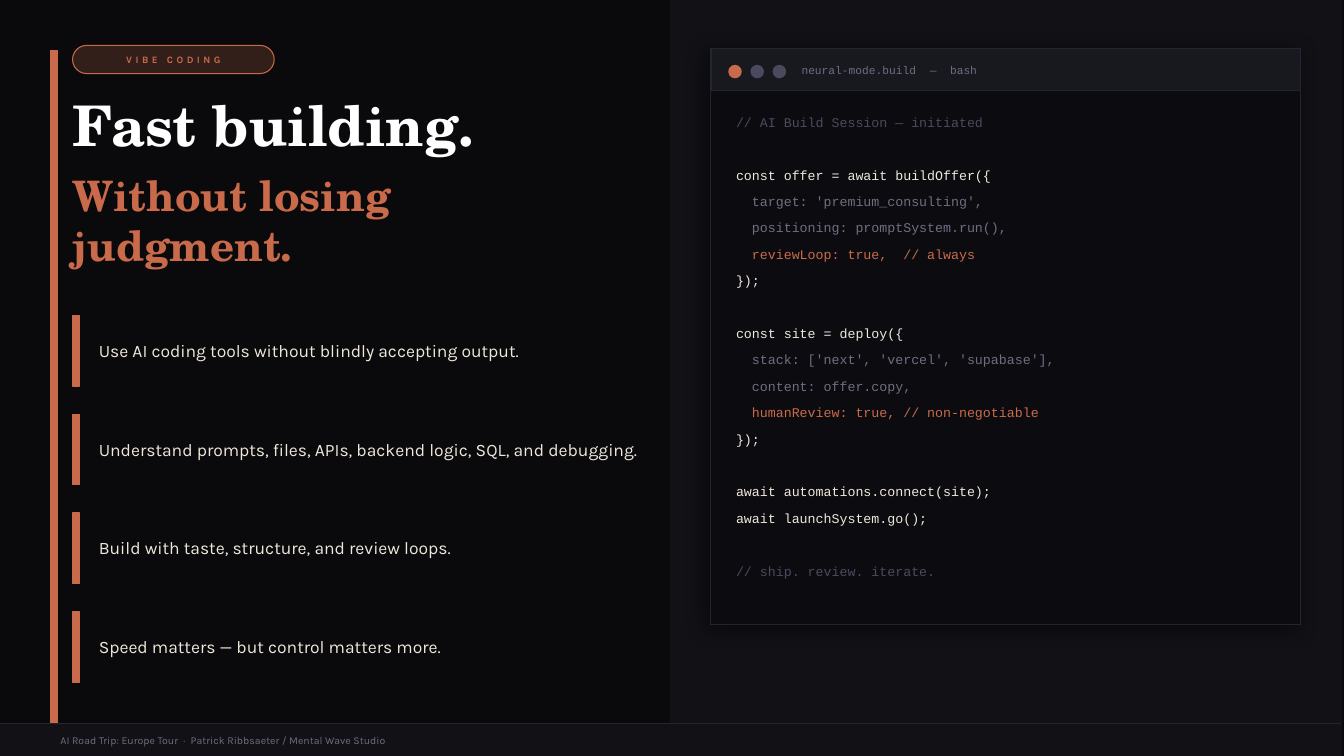
from lxml import etree
from pptx import Presentation
from pptx.dml.color import RGBColor
from pptx.enum.shapes import MSO_CONNECTOR, MSO_SHAPE
from pptx.enum.text import MSO_ANCHOR, PP_ALIGN
from pptx.oxml.ns import qn
from pptx.util import Inches, Pt

RECT, OVAL, PILL = MSO_SHAPE.RECTANGLE, MSO_SHAPE.OVAL, MSO_SHAPE.ROUNDED_RECTANGLE
STRAIGHT = MSO_CONNECTOR.STRAIGHT
TOP, MIDDLE = MSO_ANCHOR.TOP, MSO_ANCHOR.MIDDLE
LEFT, CENTER = PP_ALIGN.LEFT, PP_ALIGN.CENTER

NIGHT = RGBColor(0x0A, 0x0A, 0x0C)
PANEL = RGBColor(0x11, 0x11, 0x16)
SCREEN = RGBColor(0x0C, 0x0C, 0x10)
TITLE = RGBColor(0x18, 0x18, 0x1F)
EDGE = RGBColor(0x25, 0x25, 0x32)
RUST = RGBColor(0xC9, 0x6A, 0x4A)
SLATE = RGBColor(0x4A, 0x4A, 0x5E)
GREY = RGBColor(0x6E, 0x6E, 0x82)
CREAM = RGBColor(0xEF, 0xE8, 0xDC)
WHITE = RGBColor(0xFF, 0xFF, 0xFF)

SANS, SERIF, MONO = "Karla", "TeX Gyre Schola", "Courier New"

CODE = [
    ("// AI Build Session — initiated", SLATE),
    None,
    ("const offer = await buildOffer({", CREAM),
    ("  target: 'premium_consulting',", GREY),
    ("  positioning: promptSystem.run(),", GREY),
    ("  reviewLoop: true,  // always", RUST),
    ("});", CREAM),
    None,
    ("const site = deploy({", CREAM),
    ("  stack: ['next', 'vercel', 'supabase'],", GREY),
    ("  content: offer.copy,", GREY),
    ("  humanReview: true, // non-negotiable", RUST),
    ("});", CREAM),
    None,
    ("await automations.connect(site);", CREAM),
    ("await launchSystem.go();", CREAM),
    None,
    ("// ship. review. iterate.", SLATE),
]

POINTS = [
    "Use AI coding tools without blindly accepting output.",
    "Understand prompts, files, APIs, backend logic, SQL, and debugging.",
    "Build with taste, structure, and review loops.",
    "Speed matters — but control matters more.",
]


class Deck:
    def __init__(self):
        self.prs = Presentation()
        self.prs.slide_width = Inches(13.33)
        self.prs.slide_height = Inches(7.5)
        self.slide = self.prs.slides.add_slide(self.prs.slide_layouts[6])
        fill = self.slide.background.fill
        fill.solid()
        fill.fore_color.rgb = NIGHT

    def shape(self, box, fill, kind=RECT, line=None, width=1):
        form = self.slide.shapes.add_shape(kind, *map(Inches, box))
        form.shadow.inherit = False
        form.fill.solid()
        form.fill.fore_color.rgb = fill
        form.line.color.rgb = line or fill
        form.line.width = Pt(width)
        return form

    def fade(self, form, percent):
        """Set the opacity of a solid fill."""
        color = form.fill._xPr.find(qn("a:solidFill"))[0]
        etree.SubElement(color, qn("a:alpha"), val=str(percent * 1000))

    def shade(self, form, blur, dist, angle, percent):
        """Cast a black outer shadow."""
        effects = form._element.spPr.find(qn("a:effectLst"))
        outer = etree.SubElement(
            effects, qn("a:outerShdw"), blurRad=str(Pt(blur)),
            dist=str(Pt(dist)), dir=str(angle * 60000))
        color = etree.SubElement(outer, qn("a:srgbClr"), val="000000")
        etree.SubElement(color, qn("a:alpha"), val=str(percent * 1000))

    def rule(self, start, end, color, width):
        line = self.slide.shapes.add_connector(STRAIGHT, *map(Inches, start + end))
        line.line.color.rgb = color
        line.line.width = Pt(width)
        etree.SubElement(line._element.spPr, qn("a:effectLst"))

    def text(self, text, box, font=SANS, size=12.5, color=CREAM, bold=False,
             align=LEFT, anchor=MIDDLE, track=0, gap=0):
        """Write one paragraph per line; each "|" is a space widened by gap points."""
        frame = self.slide.shapes.add_textbox(*map(Inches, box)).text_frame
        frame.word_wrap = True
        frame.vertical_anchor = anchor
        frame.margin_left = frame.margin_right = 0
        frame.margin_top = frame.margin_bottom = 0
        for row, line in enumerate(text.split("\n")):
            para = frame.add_paragraph() if row else frame.paragraphs[0]
            para.alignment = align
            for part in line.replace("|", "\n \n").split("\n"):
                run = para.add_run()
                run.text = part
                run.font.name = font
                run.font.size = Pt(size)
                run.font.bold = bold
                run.font.color.rgb = color
                space = gap if part == " " else track
                if space:
                    run._r.get_or_add_rPr().set("spc", str(round(space * 100)))


def window(deck):
    deck.shape((6.65, 0, 6.65, 7.5), PANEL)
    screen = deck.shape((7.05, 0.48, 5.85, 5.72), SCREEN, line=EDGE, width=0.75)
    deck.shade(screen, 16, 4, 135, 45)
    deck.shape((7.05, 0.48, 5.85, 0.42), TITLE, line=EDGE)
    for col, color in enumerate((RUST, SLATE, SLATE)):
        deck.shape((7.23 + col * 0.22, 0.65, 0.12, 0.12), color, OVAL)
    deck.text("neural-mode.build|—|bash", (7.95, 0.48, 3.5, 0.42),
              font=MONO, size=8, color=GREY, gap=4.8)
    for row, entry in enumerate(CODE):
        if entry:
            line, color = entry
            deck.text(line, (7.3, 1.08 + row * 0.262, 5.35, 0.26),
                      font=MONO, size=9.5, color=color)


def pitch(deck):
    deck.shape((0.5, 0.5, 0.07, 6.68), RUST)
    badge = (0.72, 0.45, 2, 0.28)
    pill = deck.shape(badge, RUST, PILL, width=0.75)
    pill.adjustments[0] = 0.5
    deck.fade(pill, 22)
    deck.text("VIBE CODING", badge, size=7, color=RUST, bold=True,
              align=CENTER, track=2.5)
    deck.text("Fast building.", (0.72, 0.9, 6, 0.85), font=SERIF, size=40,
              color=WHITE, bold=True, anchor=TOP)
    deck.text("Without losing\njudgment.", (0.72, 1.68, 6, 1.1), font=SERIF,
              size=30, color=RUST, bold=True, anchor=TOP)
    for row, point in enumerate(POINTS):
        top = 3.05 + row * 0.98
        deck.shape((0.72, top + 0.08, 0.07, 0.7), RUST)
        deck.text(point, (0.98, top, 5.4, 0.85))


def footer(deck):
    deck.shape((0, 7.18, 13.3, 0.32), PANEL)
    deck.rule((0, 7.18), (13.3, 7.18), EDGE, 0.5)
    deck.text("AI Road Trip: Europe Tour|·|Patrick Ribbsaeter / Mental Wave Studio",
              (0.6, 7.18, 12.1, 0.32), size=7.5, color=GREY, gap=2)


def main():
    deck = Deck()
    window(deck)
    pitch(deck)
    footer(deck)
    deck.prs.save("out.pptx")


if __name__ == "__main__":
    main()
